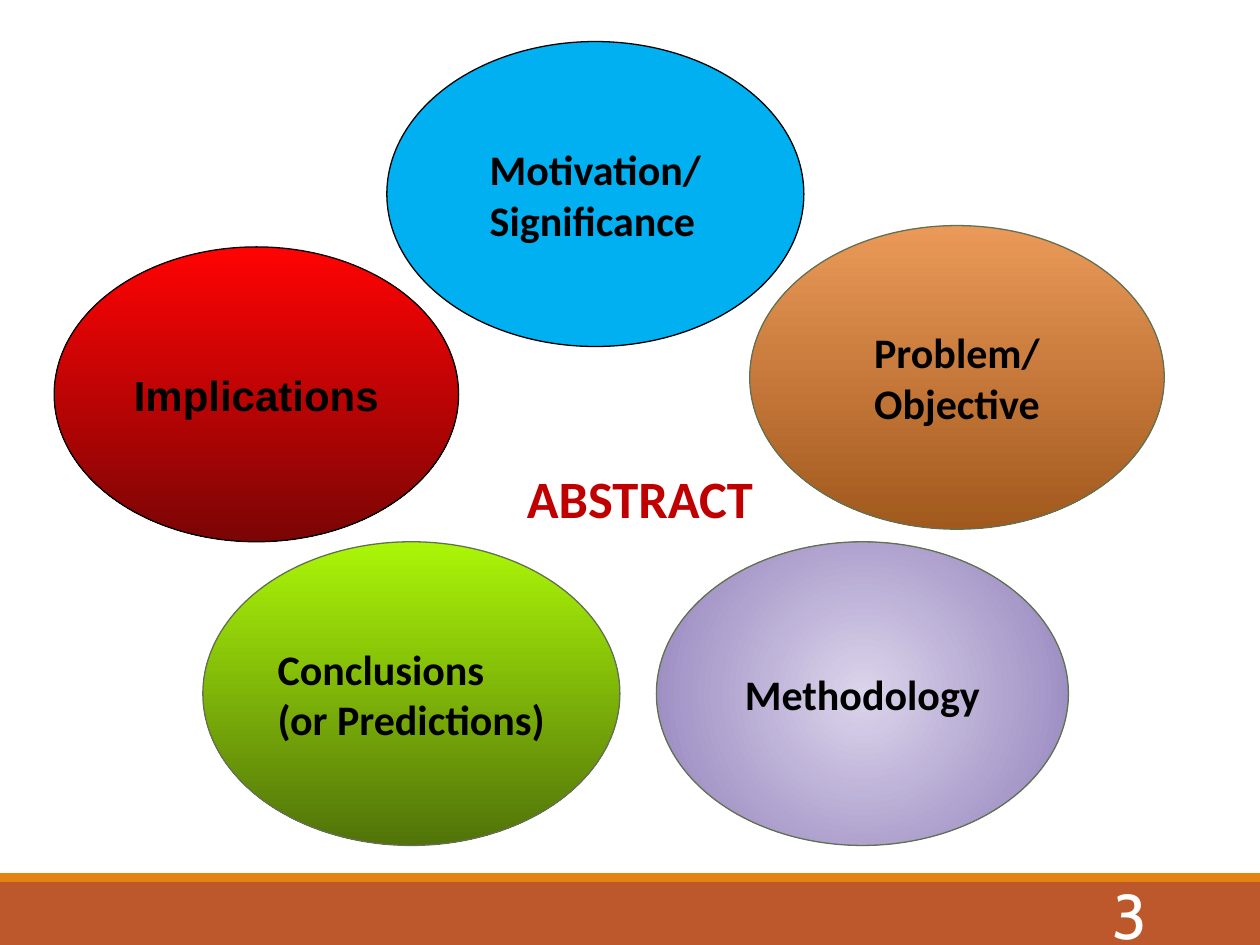
from dataclasses import dataclass
from lxml import etree
from pptx import Presentation
from pptx import util as u
from pptx.dml.color import RGBColor
from pptx.enum import shapes, text
from pptx.oxml import ns


@dataclass(frozen=True)
class Theme:
    """Colours, fonts and type sizes of the deck."""
    ink: str = "000000"
    outline: str = "637052"
    heading: str = "C00000"
    band: str = "BD582C"
    stripe: str = "E48312"
    white: str = "FFFFFF"
    motivation: tuple = ("00B0F0",)
    implications: tuple = ("FF0303", "7B0505")
    problem: tuple = ("EA9958", "A2591D")
    methodology: tuple = ("DBD4EB", "9180BB")
    conclusions: tuple = ("ABF608", "517309")
    body: str = "Calibri"
    alt: str = "Arial"
    digits: str = "Cabin"
    label_pt: int = 24
    title_pt: int = 30
    number_pt: int = 36


class Deck:
    """Draw styled elements on a grid of 100 columns by 75 rows."""

    def __init__(self, prs, theme):
        self.prs, self.theme = prs, theme
        self.s = prs.slides.add_slide(prs.slide_layouts[5])

    def box(self, col, row, cols, rows):
        w, h = self.prs.slide_width / 100, self.prs.slide_height / 75
        return [u.Emu(round(v)) for v in (col * w, row * h, cols * w, rows * h)]

    def label(self, sp, lines, font, align, margin=0.05):
        tf = sp.text_frame
        frame = dict(word_wrap=True, auto_size=text.MSO_AUTO_SIZE.NONE,
                     vertical_anchor=text.MSO_ANCHOR.MIDDLE,
                     margin_left=u.Inches(0.1), margin_right=u.Inches(0.1),
                     margin_top=u.Inches(margin), margin_bottom=u.Inches(margin))
        for name, value in frame.items():
            setattr(tf, name, value)
        for i, line in enumerate(lines):
            p = tf.add_paragraph() if i else tf.paragraphs[0]
            p.alignment = align
            r = p.add_run()
            r.text = line
            r.font.color.rgb = RGBColor.from_string(font["color"])
            for name in ("name", "size", "bold"):
                setattr(r.font, name, font[name])

    def font(self, color, size, name=None, bold=True):
        return dict(color=color, size=u.Pt(size), name=name or self.theme.body, bold=bold)

    def title(self, words, *cells):
        sp = self.s.shapes.title
        sp.left, sp.top, sp.width, sp.height = self.box(*cells)
        self.label(sp, [words], self.font(self.theme.heading, self.theme.title_pt),
                   text.PP_ALIGN.CENTER)

    def number(self, words, *cells):
        sp = self.s.shapes.add_textbox(*self.box(*cells))
        font = self.font(self.theme.white, self.theme.number_pt, self.theme.digits, False)
        self.label(sp, [words], font, text.PP_ALIGN.RIGHT)

    def bar(self, color, *cells):
        sp = self.s.shapes.add_shape(shapes.MSO_SHAPE.RECTANGLE, *self.box(*cells))
        sp.shadow.inherit = False
        sp.line.fill.background()
        self.paint(sp.fill, (color,))

    def paint(self, fill, colors):
        if len(colors) == 1:
            fill.solid()
            fill.fore_color.rgb = RGBColor.from_string(colors[0])
            return
        fill.gradient()
        fill.gradient_angle = 270
        for stop, color, position in zip(fill.gradient_stops, colors, (0, 1)):
            stop.color.rgb = RGBColor.from_string(color)
            stop.position = position

    def radiate(self, sp):
        lin = sp._element.spPr.find(".//" + ns.qn("a:lin"))
        circle = etree.Element(ns.qn("a:path"), {"path": "circle"})
        etree.SubElement(circle, ns.qn("a:fillToRect"), dict.fromkeys("ltrb", "50000"))
        lin.getparent().replace(lin, circle)

    def oval(self, lines, colors, cells, line=None, font=None, radial=False):
        sp = self.s.shapes.add_shape(shapes.MSO_SHAPE.OVAL, *self.box(*cells))
        sp.shadow.inherit = False
        self.paint(sp.fill, colors)
        if radial:
            self.radiate(sp)
        sp.line.color.rgb = RGBColor.from_string(line or self.theme.outline)
        sp.line.width = u.Pt(0.75)
        self.label(sp, lines, self.font(self.theme.ink, self.theme.label_pt, font),
                   text.PP_ALIGN.LEFT, 0.1)
        sp.text_frame._txBody.bodyPr.set("anchorCtr", "1")


def main():
    prs = Presentation()
    prs.slide_width, prs.slide_height = u.Inches(10), u.Inches(7.5)
    t = Theme()
    d = Deck(prs, t)
    d.bar(t.band, 0, 70, 100, 5)
    d.bar(t.stripe, 0, 69.3, 100, 0.7)
    d.title("ABSTRACT", 37.4, 29.5, 26.8, 20)
    d.number("3", 81.2, 70.6, 10.8, 4)
    d.oval(["Motivation/", "Significance"], t.motivation, (30.7, 3.3, 33.1, 24.2), t.ink)
    d.oval(["Implications"], t.implications, (4.3, 19.6, 32.1, 23.4), t.ink, t.alt)
    d.oval(["Problem/ Objective"], t.problem, (59.5, 17.9, 32.9, 24.1))
    d.oval(["Methodology"], t.methodology, (52.1, 43, 32.7, 24.1), radial=True)
    d.oval(["Conclusions", "(or Predictions)"], t.conclusions, (16.1, 43, 33.1, 24.1))
    prs.save("out.pptx")


if __name__ == "__main__":
    main()
